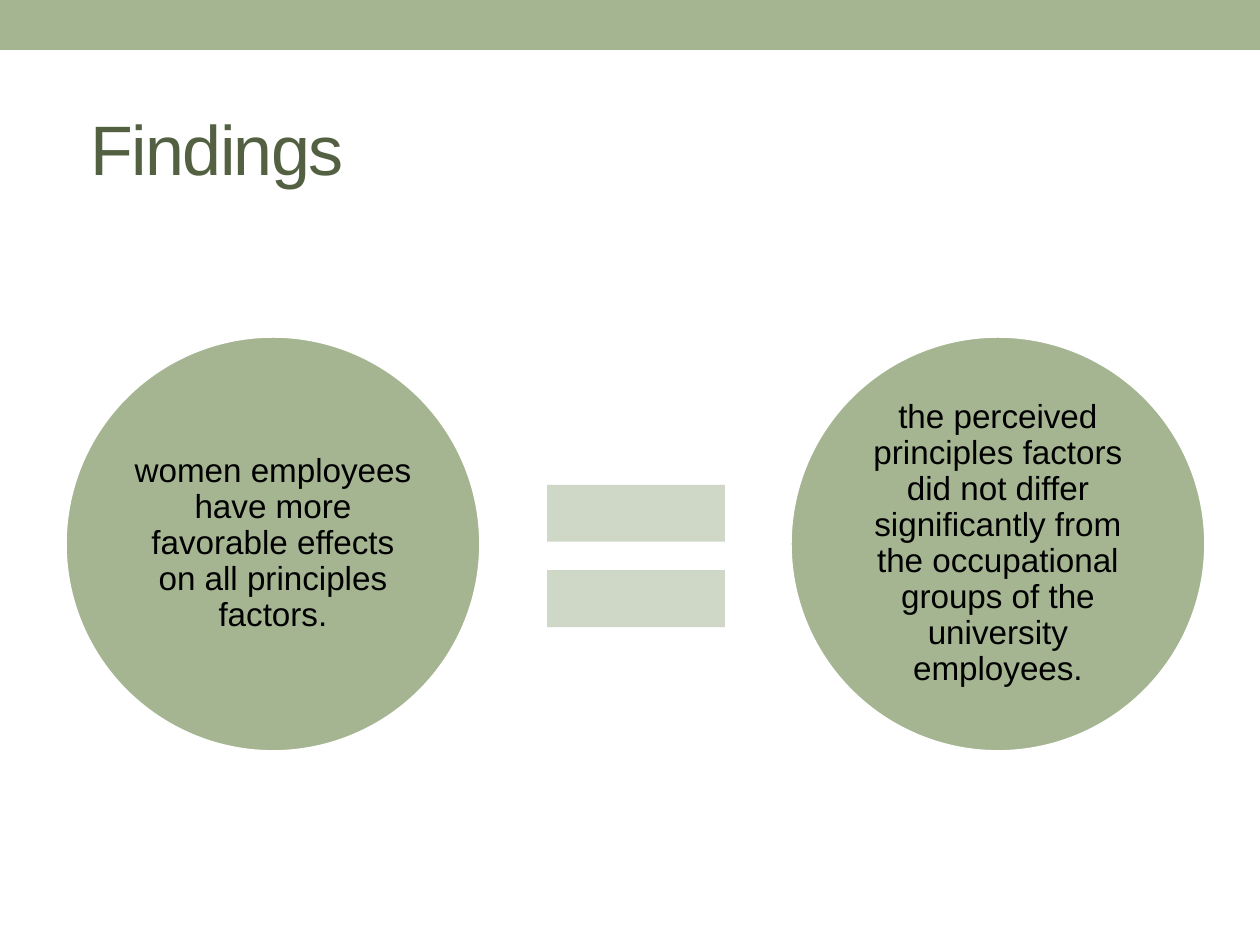
from pptx import Presentation
from pptx.dml.color import RGBColor
from pptx.enum.shapes import MSO_SHAPE
from pptx.enum.text import MSO_ANCHOR, PP_ALIGN
from pptx.util import Pt

PX = 914400 / 126
FONT = "Arial"
COLORS = {
    "sage": "A5B592",
    "pale": "CFD7C7",
    "moss": "536142",
    "white": "FFFFFF",
    "black": "000000",
}


def px(*sizes):
    """Turn pixel lengths into EMU."""
    return [round(size * PX) for size in sizes]


def color(name):
    return RGBColor.from_string(COLORS[name])


class Deck:
    def __init__(self, wide, high):
        self.prs = Presentation()
        self.prs.slide_width, self.prs.slide_height = px(wide, high)
        self.slide = self.prs.slides.add_slide(self.prs.slide_layouts[5])

    def label(self, frame, text, size, tone, align, insets):
        frame.word_wrap = True
        frame.vertical_anchor = MSO_ANCHOR.MIDDLE
        (frame.margin_left, frame.margin_top,
         frame.margin_right, frame.margin_bottom) = px(*insets)
        frame.text = text
        para = frame.paragraphs[0]
        para.alignment = align
        para.font.name = FONT
        para.font.size = Pt(size)
        para.font.color.rgb = color(tone)
        return para

    def title(self, text, box):
        shape = self.slide.shapes.title
        shape.left, shape.top, shape.width, shape.height = px(*box)
        para = self.label(shape.text_frame, text, 40, "moss",
                          PP_ALIGN.LEFT, (28, 18, 13, 6))
        para.runs[0].font._element.set("spc", "-100")

    def shape(self, kind, box, fill):
        shape = self.slide.shapes.add_shape(kind, *px(*box))
        shape.shadow.inherit = False
        shape.fill.solid()
        shape.fill.fore_color.rgb = color(fill)
        shape.line.fill.background()
        return shape

    def circle(self, text, left, top, size):
        shape = self.shape(MSO_SHAPE.OVAL, (left, top, size, size), "sage")
        shape.line.color.rgb = color("white")
        shape.line.width = Pt(2.08)
        para = self.label(shape.text_frame, text, 19, "black",
                          PP_ALIGN.CENTER, (4, 4, 4, 4))
        para.line_spacing = 0.9


def main():
    deck = Deck(1260, 945)
    deck.shape(MSO_SHAPE.RECTANGLE, (0, 0, 1260, 50), "sage")
    deck.title("Findings", (63, 73, 1134, 136))
    deck.circle("women employees have more favorable effects on all "
                "principles factors.", 65, 336, 416)
    deck.shape(MSO_SHAPE.MATH_EQUAL, (515, 435, 242, 242), "pale")
    deck.circle("the perceived principles factors did not differ "
                "significantly from the occupational groups of the "
                "university employees.", 790, 336, 416)
    deck.prs.save("out.pptx")


if __name__ == "__main__":
    main()
